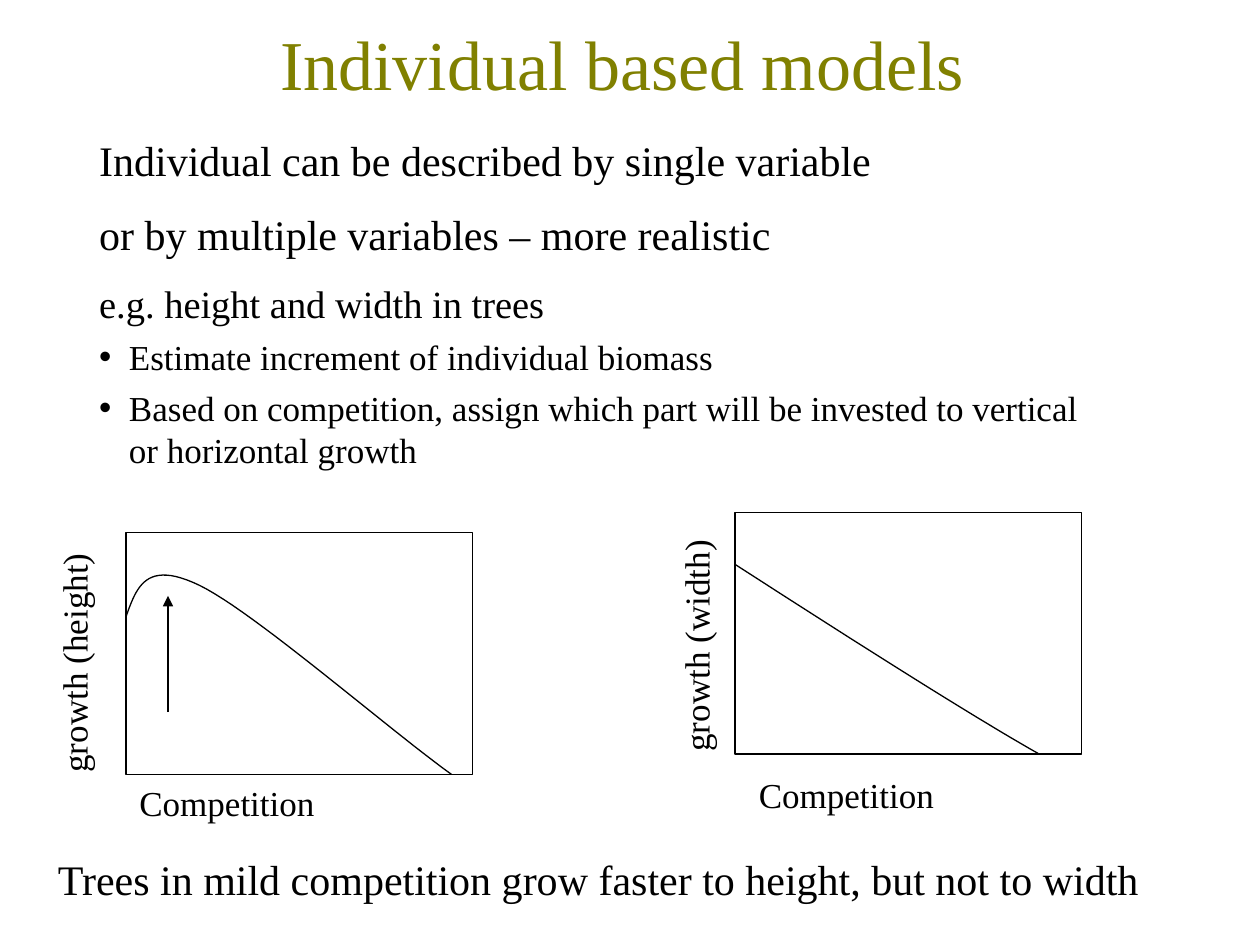
from lxml.etree import SubElement
from pptx import Presentation
from pptx.dml.color import RGBColor
from pptx.enum.shapes import MSO_CONNECTOR, MSO_SHAPE
from pptx.enum.text import MSO_ANCHOR, MSO_AUTO_SIZE, PP_ALIGN
from pptx.oxml.ns import qn
from pptx.util import Pt

BLACK = RGBColor(0, 0, 0)
OLIVE = RGBColor(0x80, 0x80, 0)
FONT = "Times New Roman"
PLOT_WIDTH, PLOT_HEIGHT = 198, 138
CURVE_STEPS = 24

BODY_LINES = [  # text, size, space before, bulleted
    ("Individual can be described by single variable", 24, 0, False),
    ("or by multiple variables – more realistic", 24, 13, False),
    ("e.g. height and width in trees", 22, 12.5, False),
    ("Estimate increment of individual biomass", 20, 5, True),
    ("Based on competition, assign which part will be invested to vertical "
     "or horizontal growth", 20, 5, True),
]


def place(shape, left, top, width, height):
    shape.left, shape.top = Pt(left), Pt(top)
    shape.width, shape.height = Pt(width), Pt(height)


def format_font(paragraph, size, color=BLACK):
    font = paragraph.font
    font.name, font.size = FONT, Pt(size)
    font.color.rgb = color


def set_bullet(paragraph, bulleted):
    properties = paragraph._p.get_or_add_pPr()
    indent = Pt(17) if bulleted else 0
    properties.set("marL", str(indent))
    properties.set("indent", str(-indent))
    if bulleted:
        SubElement(properties, qn("a:buChar")).set("char", "•")
    else:
        SubElement(properties, qn("a:buNone"))


def fill_title(title, text):
    place(title, 49.5, 7, 612, 57)
    frame = title.text_frame
    frame.text = text
    frame.auto_size = MSO_AUTO_SIZE.NONE
    frame.vertical_anchor = MSO_ANCHOR.MIDDLE
    paragraph = frame.paragraphs[0]
    paragraph.alignment = PP_ALIGN.CENTER
    format_font(paragraph, 40, OLIVE)


def fill_body(body):
    place(body, 49.5, 73.5, 586, 242.5)
    frame = body.text_frame
    frame.auto_size = MSO_AUTO_SIZE.NONE
    frame.text = "\n".join(line[0] for line in BODY_LINES)
    for paragraph, (_, size, space, bulleted) in zip(frame.paragraphs, BODY_LINES):
        paragraph.space_before = Pt(space)
        set_bullet(paragraph, bulleted)
        format_font(paragraph, size)


def add_label(slide, text, left, top, width, height=31, size=20, rotation=0):
    box = slide.shapes.add_textbox(Pt(left), Pt(top), Pt(width), Pt(height))
    box.rotation = rotation
    frame = box.text_frame
    frame.word_wrap = True
    frame.text = text
    format_font(frame.paragraphs[0], size)


def outline(shape):
    shape.shadow.inherit = False
    shape.fill.background()
    shape.line.color.rgb = BLACK
    shape.line.width = Pt(0.75)


def add_plot_frame(slide, left, top):
    frame = slide.shapes.add_shape(
        MSO_SHAPE.RECTANGLE, Pt(left), Pt(top), Pt(PLOT_WIDTH), Pt(PLOT_HEIGHT))
    outline(frame)


def bezier_point(controls, t):
    weights = ((1 - t) ** 3, 3 * t * (1 - t) ** 2, 3 * t ** 2 * (1 - t), t ** 3)
    return tuple(Pt(sum(w * point[axis] for w, point in zip(weights, controls)))
                 for axis in (0, 1))


def add_curve(slide, start, *segments):
    """Draw joined cubic Bezier segments, each two controls and an end point."""
    builder = slide.shapes.build_freeform(Pt(start[0]), Pt(start[1]))
    points = []
    for segment in segments:
        controls = (start, *segment)
        points += [bezier_point(controls, step / CURVE_STEPS)
                   for step in range(1, CURVE_STEPS + 1)]
        start = segment[-1]
    builder.add_line_segments(points, close=False)
    outline(builder.convert_to_shape())


def add_arrow(slide, start, end):
    arrow = slide.shapes.add_connector(
        MSO_CONNECTOR.STRAIGHT, *(Pt(value) for value in (*start, *end)))
    arrow.line.color.rgb = BLACK
    arrow.line.width = Pt(0.75)
    SubElement(arrow.line._get_or_add_ln(), qn("a:tailEnd")).set("type", "triangle")
    SubElement(arrow._element.spPr, qn("a:effectLst"))


def main():
    presentation = Presentation()
    presentation.slide_width, presentation.slide_height = Pt(720), Pt(540)
    slide = presentation.slides.add_slide(presentation.slide_layouts[1])
    fill_title(slide.shapes.title, "Individual based models")
    fill_body(slide.placeholders[1])

    add_plot_frame(slide, 72, 304.5)
    add_label(slide, "growth (height)", -34.5, 356.5, 153, rotation=270)
    add_label(slide, "Competition", 72.5, 443, 198)
    add_curve(slide, (72, 352.5),
              ((78, 336), (83, 319.5), (114, 334.5)),
              ((145, 349.5), (223, 417.5), (258, 442.5)))
    add_arrow(slide, (96, 407), (96, 340.5))

    add_plot_frame(slide, 420, 293)
    add_label(slide, "growth (width)", 327, 350.5, 141, rotation=270)
    add_label(slide, "Competition", 426.5, 438.5, 198)
    add_curve(slide, (420, 322.5), ((487.5, 366), (555, 409), (594, 431)))

    add_label(slide, "Trees in mild competition grow faster to height, but not to width",
              26, 484, 658, 36, size=24)
    presentation.save("out.pptx")


if __name__ == "__main__":
    main()
